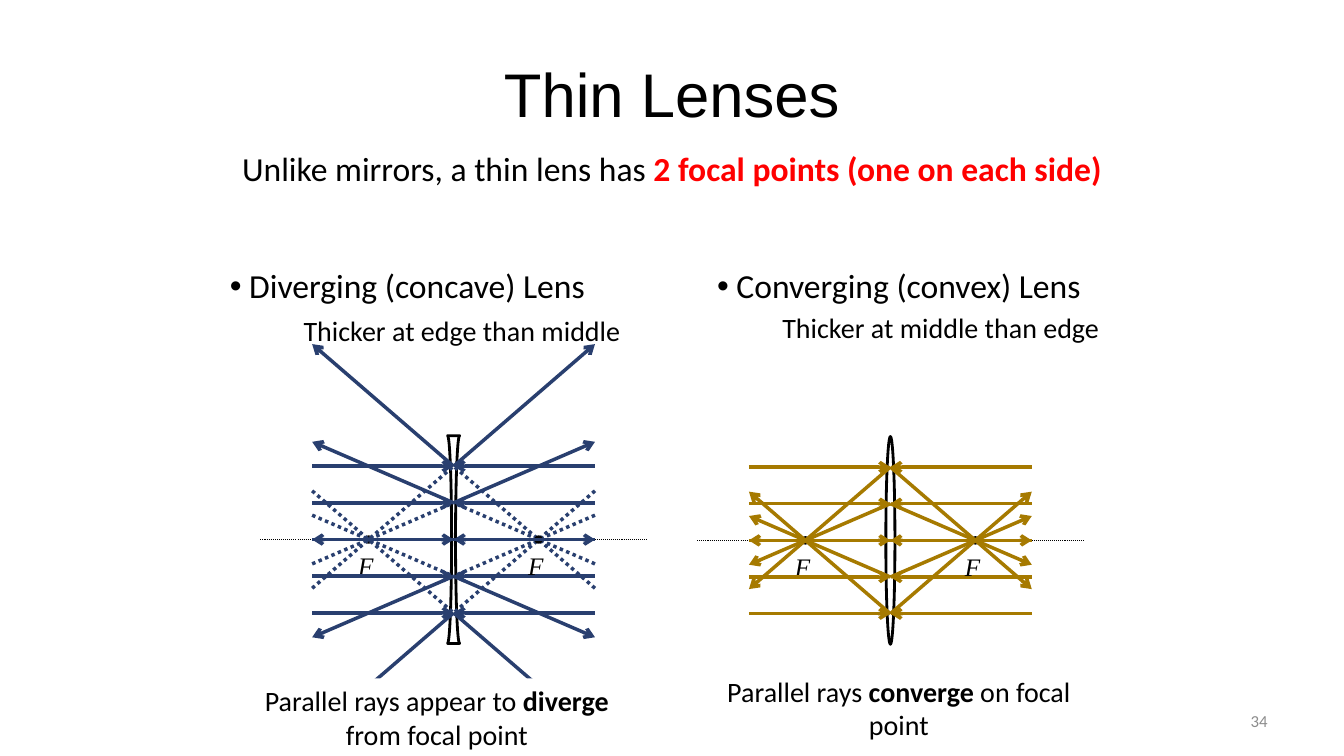
from math import cos, pi, sin

from pptx import Presentation
from pptx.dml.color import RGBColor
from pptx.enum.dml import MSO_LINE_DASH_STYLE as DASH
from pptx.enum.shapes import MSO_CONNECTOR, MSO_SHAPE as SHAPE
from pptx.enum.text import MSO_ANCHOR as ANCHOR, PP_ALIGN as ALIGN
from pptx.oxml.ns import qn
from pptx.util import Pt
from lxml.etree import SubElement

BLACK, WHITE, RED, GRAY = "000000", "FFFFFF", "FF0000", "8C8C8C"
NAVY, GOLD = "293F6F", "A67A00"

RAY_GAP = 26.2      # distance between neighbouring parallel rays
FOCAL = 60.7        # lens centre to focal point
REACH = 101         # lens centre to the end of a ray
AXIS_REACH = 138
LENS_HALF = 74.2


def rgb(hex_color):
    return RGBColor.from_string(hex_color)


def add_text(s, box, runs, size=20, font="Calibri", align=ALIGN.CENTER,
             anchor=ANCHOR.TOP, fill=None, bullet=False):
    """Place one paragraph; runs are (text, format values) pairs."""
    sp = s.shapes.add_textbox(*map(Pt, box))
    if fill:
        sp.fill.solid()
        sp.fill.fore_color.rgb = rgb(fill)
    tf = sp.text_frame
    tf.word_wrap = True
    tf.vertical_anchor = anchor
    p = tf.paragraphs[0]
    p.alignment = align
    if bullet:
        pPr = p._p.get_or_add_pPr()
        pPr.set("marL", "0")
        pPr.set("indent", "0")
        SubElement(pPr, qn("a:buFont"), typeface="Arial")
        SubElement(pPr, qn("a:buChar"), char="•")
    for text, formats in runs:
        r = p.add_run()
        r.text = text
        values = {"size": Pt(size), "name": font, "color": BLACK, **formats}
        r.font.color.rgb = rgb(values.pop("color"))
        for key, value in values.items():
            setattr(r.font, key, value)
    return sp


def add_line(s, start, end, color, width=2.5, dotted=False, arrow=False):
    c = s.shapes.add_connector(MSO_CONNECTOR.STRAIGHT,
                               *map(Pt, (*start, *end)))
    c.line.color.rgb = rgb(color)
    c.line.width = Pt(width)
    if dotted:
        c.line.dash_style = DASH.ROUND_DOT
    if arrow:
        SubElement(c.line._get_or_add_ln(), qn("a:tailEnd"), type="arrow")
    SubElement(c._element.spPr, qn("a:effectLst"))


def outline(sp, fill=None):
    sp.shadow.inherit = False
    if fill:
        sp.fill.solid()
        sp.fill.fore_color.rgb = rgb(fill)
    else:
        sp.fill.background()
    sp.line.color.rgb = rgb(BLACK)
    sp.line.width = Pt(2)


def add_ellipse(s, cx, cy, width, height, fill=None):
    box = (cx - width / 2, cy - height / 2, width, height)
    outline(s.shapes.add_shape(SHAPE.OVAL, *map(Pt, box)), fill)


def add_concave_lens(s, cx, cy, edge=4.3, waist=1.4, steps=24):
    angles = [pi * i / steps for i in range(steps + 1)]
    side = [(edge - (edge - waist) * sin(a), -LENS_HALF * cos(a))
            for a in angles]
    points = side + [(-x, y) for x, y in reversed(side)]
    points = [(Pt(cx + x), Pt(cy + y)) for x, y in points]
    fb = s.shapes.build_freeform(*points[0])
    fb.add_line_segments(points[1:], close=True)
    outline(fb.convert_to_shape())


def ray_diagram(s, cx, cy, color, diverging):
    """Draw lens, axis, focal points and the rays from both sides."""
    if diverging:
        add_concave_lens(s, cx, cy)
    else:
        add_ellipse(s, cx, cy, 6.5, 2 * LENS_HALF)
    add_line(s, (cx - AXIS_REACH, cy), (cx + AXIS_REACH, cy), BLACK,
             width=0.75, dotted=True)
    for side in (-1, 1):
        focus = cx + side * FOCAL
        add_ellipse(s, focus, cy, 4, 4, fill=BLACK)
        label = add_text(s, (focus - 12, cy + 4, 20, 29),
                         [("F", {"italic": True})], 18, "Times New Roman")
        label.text_frame.margin_left = label.text_frame.margin_right = 0
        for step in range(-2, 3):
            height = step * RAY_GAP
            bend = height * REACH / FOCAL
            hit = (cx, cy + height)
            near, far = cx - side * REACH, cx + side * REACH
            add_line(s, (near, cy + height), hit, color, arrow=True)
            out = height + bend if diverging else height - bend
            add_line(s, hit, (far, cy + out), color, arrow=True)
            if diverging and step:
                add_line(s, (near, cy + height - bend), hit, color,
                         dotted=True)


def lens_panel(s, cx, cy, color, diverging, heading, note, caption):
    """Each text is (left and top from the lens centre, width, content)."""
    ray_diagram(s, cx, cy, color, diverging)
    dx, dy, width, text = heading
    add_text(s, (cx + dx, cy + dy, width, 36), [(text, {})], 24, bullet=True)
    dx, dy, width, text = note
    add_text(s, (cx + dx, cy + dy, width, 32), [(text, {})])
    dx, dy, width, (before, strong, after) = caption
    add_text(s, (cx + dx, cy + dy, width, 55.4),
             [(before, {}), (strong, {"bold": True}), (after, {})],
             fill=WHITE if diverging else None)


def header(s, x, y, width):
    add_text(s, (x, y, width, 90), [("Thin Lenses", {})], 44, "Arial",
             anchor=ANCHOR.MIDDLE)
    add_text(s, (x + 72, y + 80.5, width - 144, 36),
             [("Unlike mirrors, a thin lens has ", {}),
              ("2 focal points (one on each side)",
               {"color": RED, "bold": True})], 24)


def page_number(s, x, y, width, height):
    add_text(s, (x, y, width, height), [("34", {"color": GRAY})], 12,
             align=ALIGN.RIGHT, anchor=ANCHOR.MIDDLE)


def main():
    prs = Presentation()
    prs.slide_width, prs.slide_height = Pt(960), Pt(540)
    s = prs.slides.add_slide(prs.slide_layouts[6])
    header(s, 48, 21.6, 864)
    lens_panel(s, 636, 386, GOLD, False,
               (-144, -200, 300, " Converging (convex) Lens"),
               (-102, -168, 276, "Thicker at middle than edge"),
               (-132, 92, 276,
                ("Parallel rays ", "converge", " on focal point")))
    lens_panel(s, 324, 385.4, NAVY, True,
               (-192, -199.4, 318, " Diverging (concave) Lens"),
               (-132, -165, 276, "Thicker at edge than middle"),
               (-150, 99.2, 276,
                ("Parallel rays appear to ", "diverge",
                 " from focal point")))
    page_number(s, 688.5, 500.5, 224, 28.8)
    prs.save("out.pptx")


if __name__ == "__main__":
    main()
